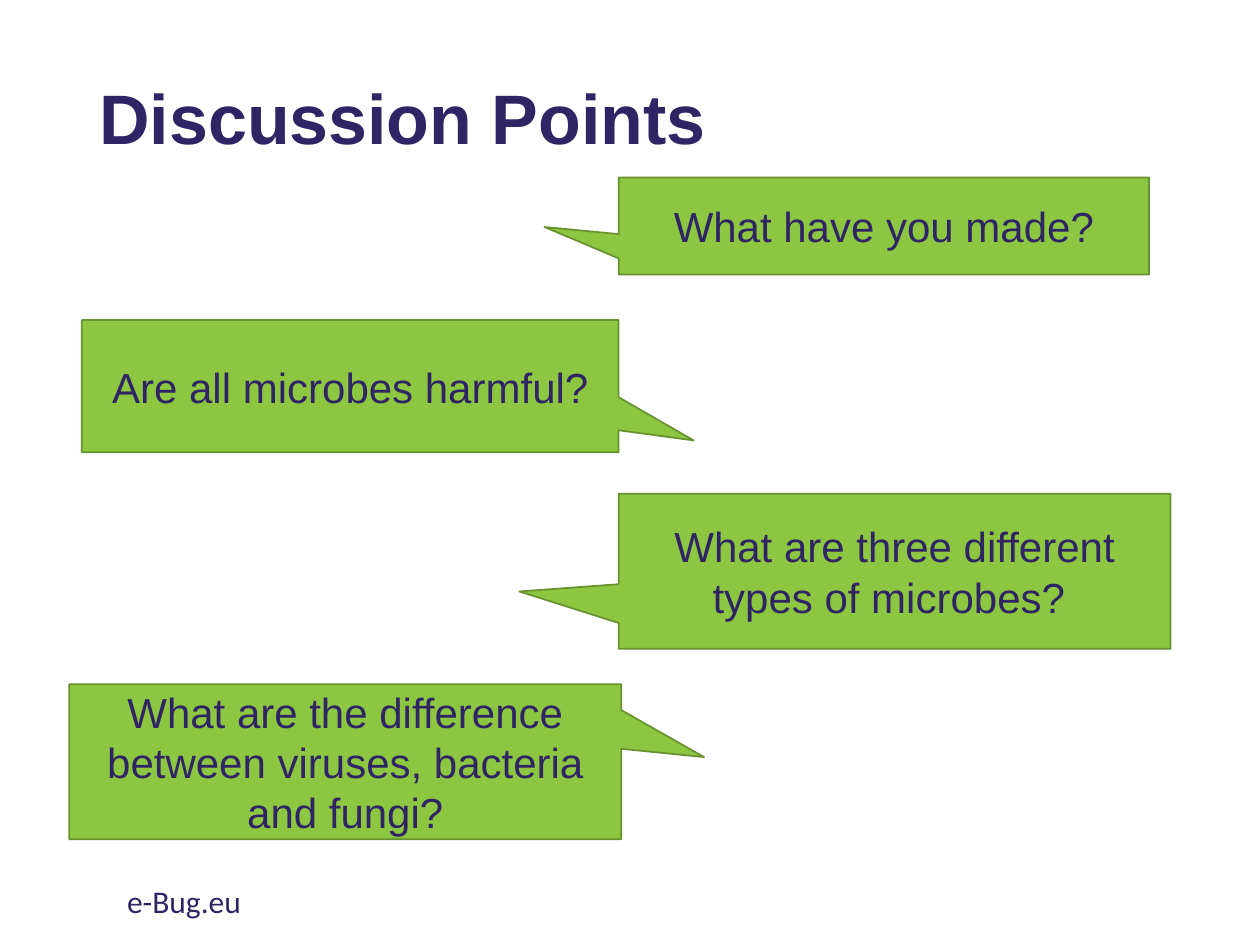
from dataclasses import dataclass

from pptx import Presentation
from pptx.dml.color import RGBColor
from pptx.enum.shapes import MSO_SHAPE
from pptx.enum.text import MSO_ANCHOR, PP_ALIGN
from pptx.util import Pt


@dataclass(frozen=True)
class Theme:
    ink: RGBColor = RGBColor(0x30, 0x25, 0x64)
    fill: RGBColor = RGBColor(0x8D, 0xC6, 0x41)
    edge: RGBColor = RGBColor(0x68, 0x92, 0x30)
    head: int = 40
    body: int = 24
    foot: int = 18


THEME = Theme()

# Text, box (left, top, width, height), tip offset from the centre
POINTS = [
    ("What have you made?", (353.5, 101.5, 303.1, 55.4), (-0.64, 0.01)),
    ("Are all microbes harmful?", (46.8, 182.9, 306.7, 75.6), (0.64, 0.41)),
    ("What are three different types of microbes? ",
     (353.5, 282.2, 315.4, 88.6), (-0.68, 0.13)),
    ("What are the difference between viruses, bacteria and fungi?",
     (39.6, 391, 315.4, 88.6), (0.65, -0.03)),
]


def write(shape, text, size, font="Arial", bold=False, align=PP_ALIGN.LEFT,
          anchor=MSO_ANCHOR.MIDDLE, space=1.0):
    frame = shape.text_frame
    frame.word_wrap = True
    frame.vertical_anchor = anchor
    para = frame.paragraphs[0]
    para.alignment = align
    para.line_spacing = space
    run = para.add_run()
    run.text = text
    run.font.name = font
    run.font.size = Pt(size)
    run.font.bold = bold
    run.font.color.rgb = THEME.ink


def label(slide, text, box, size, **style):
    shape = slide.shapes.add_textbox(*map(Pt, box))
    write(shape, text, size, **style)


def bubble(slide, text, box, tip):
    shape = slide.shapes.add_shape(
        MSO_SHAPE.RECTANGULAR_CALLOUT, *map(Pt, box))
    shape.adjustments[0], shape.adjustments[1] = tip
    shape.shadow.inherit = False
    shape.fill.solid()
    shape.fill.fore_color.rgb = THEME.fill
    shape.line.color.rgb = THEME.edge
    shape.line.width = Pt(1)
    write(shape, text, THEME.body, align=PP_ALIGN.CENTER)


def main():
    deck = Presentation()
    deck.slide_width, deck.slide_height = Pt(720), Pt(540)
    slide = deck.slides.add_slide(deck.slide_layouts[6])

    # Title
    label(slide, "Discussion Points", (49.7, 28.8, 620.6, 82.1), THEME.head,
          bold=True, space=0.9)

    # Questions
    for text, box, tip in POINTS:
        bubble(slide, text, box, tip)

    # Footer
    label(slide, "e-Bug.eu", (65.5, 500.4, 243.4, 28.8), THEME.foot,
          font="Calibri", anchor=MSO_ANCHOR.TOP)

    deck.save("out.pptx")


if __name__ == "__main__":
    main()
